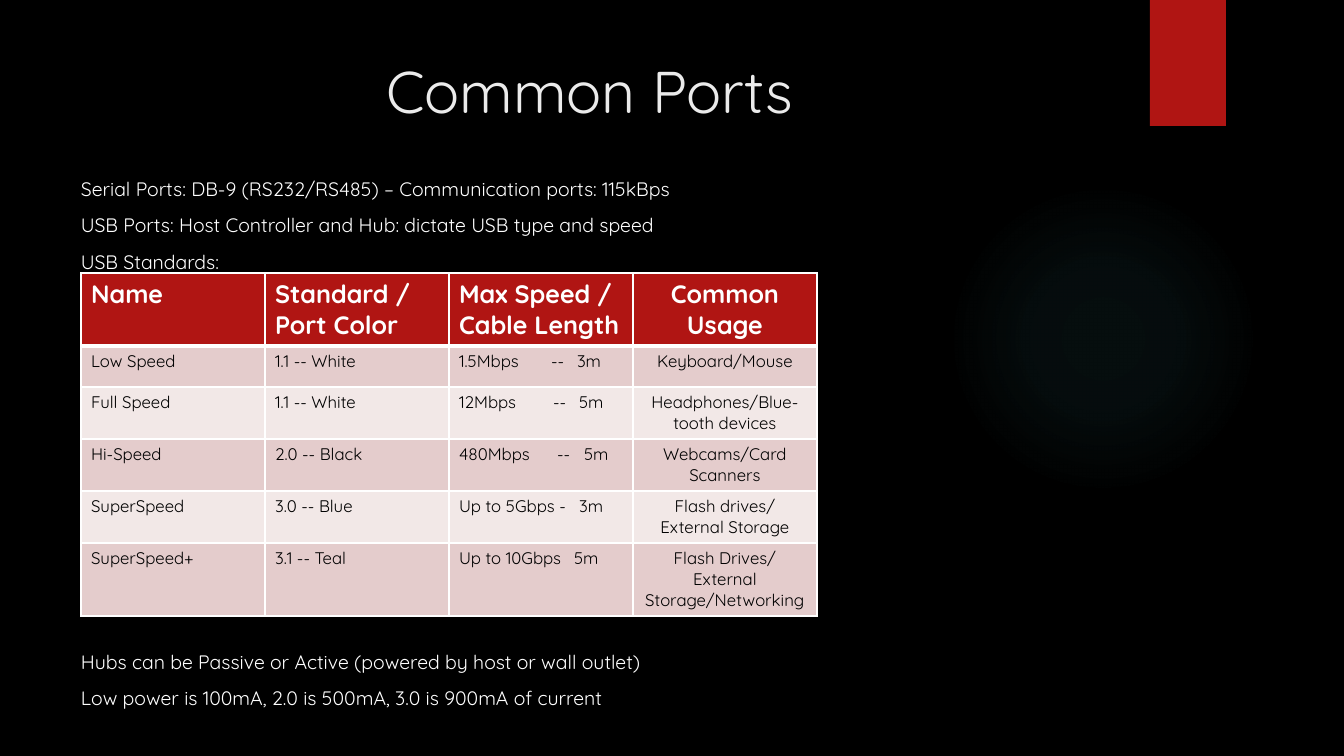
from lxml import etree
from pptx import Presentation
from pptx.dml.color import RGBColor
from pptx.enum.shapes import MSO_SHAPE
from pptx.enum.text import MSO_ANCHOR, PP_ALIGN
from pptx.oxml import parse_xml
from pptx.oxml.ns import nsdecls, qn
from pptx.util import Pt

PX = 914400 / 100.8
LEFT, CENTER = PP_ALIGN.LEFT, PP_ALIGN.CENTER
TOP = MSO_ANCHOR.TOP
RECT, OVAL = MSO_SHAPE.RECTANGLE, MSO_SHAPE.OVAL

BLACK = RGBColor(0x00, 0x00, 0x00)
WHITE = RGBColor(0xFF, 0xFF, 0xFF)
OFF_WHITE = RGBColor(0xEB, 0xEB, 0xEB)
RED = RGBColor(0xB0, 0x15, 0x13)
PINK = RGBColor(0xE4, 0xCC, 0xCC)
PALE_PINK = RGBColor(0xF2, 0xE8, 0xE7)
TEAL = RGBColor(0x50, 0xB9, 0xC1)

FONT = "Quicksand"
TITLE = {"name": FONT, "size": Pt(42)}
BODY = {"name": FONT, "size": Pt(13.9)}
HEADER = {"name": FONT, "size": Pt(18), "bold": True}
CELL = {"name": FONT, "size": Pt(12), "bold": False}

PORTS = [
    "Serial Ports: DB-9 (RS232/RS485) – Communication ports: 115kBps",
    "USB Ports: Host Controller and Hub: dictate USB type and speed",
    "USB Standards:",
]
POWER = [
    "Hubs can be Passive or Active (powered by host or wall outlet)",
    "Low power is 100mA, 2.0 is 500mA, 3.0 is 900mA of current",
]
# Each row: height, tab stops of the speed column, cell texts
STANDARDS = [
    (73, [], ["Name", "Standard / Port Color", "Max Speed / Cable Length", "Common Usage"]),
    (41, [92, 118], ["Low Speed", "1.1 -- White", "1.5Mbps\t--\t3m", "Keyboard/Mouse"]),
    (52, [94, 120], ["Full Speed", "1.1 -- White", "12Mbps\t--\t5m",
                     "Headphones/Blue-tooth devices"]),
    (52, [98, 125], ["Hi-Speed", "2.0 -- Black", "480Mbps\t--\t5m", "Webcams/Card Scanners"]),
    (52, [120], ["SuperSpeed", "3.0 -- Blue", "Up to 5Gbps -\t3m",
                 "Flash drives/ External Storage"]),
    (73, [115], ["SuperSpeed+", "3.1 -- Teal", "Up to 10Gbps\t5m",
                 "Flash Drives/ External Storage/Networking"]),
]
SPEED_COL, USAGE_COL = 2, 3


def px(n):
    return round(n * PX)


def write(p, text, fmt, color, align=LEFT, tabs=()):
    p.alignment = align
    if tabs:
        tab_list = etree.SubElement(p._p.get_or_add_pPr(), qn("a:tabLst"))
        for stop in tabs:
            etree.SubElement(tab_list, qn("a:tab"), pos=str(px(stop)), algn="l")
    r = p.add_run()
    r.text = text
    for key, value in fmt.items():
        setattr(r.font, key, value)
    r.font.color.rgb = color


def add_text(s, box, lines, fmt, color, align=LEFT):
    tf = s.shapes.add_textbox(*map(px, box)).text_frame
    tf.word_wrap = True
    tf.vertical_anchor = TOP
    for i, line in enumerate(lines):
        p = tf.paragraphs[0] if i == 0 else tf.add_paragraph()
        if i:
            p.space_before = Pt(9.3)
        write(p, line, fmt, color, align)


def add_backdrop(s, glow_box, tab_box):
    s.background.fill.solid()
    s.background.fill.fore_color.rgb = BLACK

    # Soft round glow
    glow = s.shapes.add_shape(OVAL, *map(px, glow_box))
    glow.shadow.inherit = False
    glow.line.fill.background()
    stops = "".join(
        f'<a:gs pos="{pos}000"><a:srgbClr val="{TEAL}"><a:alpha val="{alpha}000"/>'
        "</a:srgbClr></a:gs>" for pos, alpha in ((0, 7), (36, 6), (69, 0)))
    glow.element.spPr.find(qn("a:prstGeom")).addnext(parse_xml(
        f'<a:gradFill {nsdecls("a")}><a:gsLst>{stops}</a:gsLst><a:path path="circle">'
        '<a:fillToRect l="50000" t="50000" r="50000" b="50000"/></a:path></a:gradFill>'))

    # Red tab at the top edge
    sp = s.shapes.add_shape(RECT, *map(px, tab_box))
    sp.shadow.inherit = False
    sp.fill.solid()
    sp.fill.fore_color.rgb = RED
    sp.line.fill.background()


def set_borders(cell, **widths):
    tcPr = cell._tc.get_or_add_tcPr()
    for side in "LRTB":
        tcPr.append(parse_xml(
            f'<a:ln{side} {nsdecls("a")} w="{Pt(widths.get(side, 1))}"><a:solidFill>'
            f'<a:srgbClr val="{WHITE}"/></a:solidFill></a:ln{side}>'))


def add_standards(s, left, top, width):
    height = sum(row[0] for row in STANDARDS)
    cols = len(STANDARDS[0][2])
    table = s.shapes.add_table(
        len(STANDARDS), cols, *map(px, (left, top, width, height))).table
    for col in table.columns:
        col.width = px(width / cols)
    for i, (row_height, tabs, texts) in enumerate(STANDARDS):
        table.rows[i].height = px(row_height)
        fmt, color = (CELL, BLACK) if i else (HEADER, WHITE)
        fill = RED if i == 0 else PINK if i % 2 else PALE_PINK
        for j, text in enumerate(texts):
            cell = table.cell(i, j)
            set_borders(cell, T=3 if i == 1 else 1, B=3 if i == 0 else 1)
            cell.fill.solid()
            cell.fill.fore_color.rgb = fill
            write(cell.text_frame.paragraphs[0], text, fmt, color,
                  CENTER if j == USAGE_COL else LEFT,
                  tabs if j == SPEED_COL else ())


def main():
    prs = Presentation()
    prs.slide_width, prs.slide_height = px(1344), px(756)
    s = prs.slides.add_slide(prs.slide_layouts[6])
    add_backdrop(s, (948, 184, 310, 310), (1150, 0, 76, 126))
    add_text(s, (71, 50, 1037, 95), ["Common Ports"], TITLE, OFF_WHITE, CENTER)
    add_text(s, (71, 172, 1036, 112), PORTS, BODY, WHITE)
    add_text(s, (71, 645, 1036, 74), POWER, BODY, WHITE)
    add_standards(s, 81, 273, 736)
    prs.save("out.pptx")


if __name__ == "__main__":
    main()
